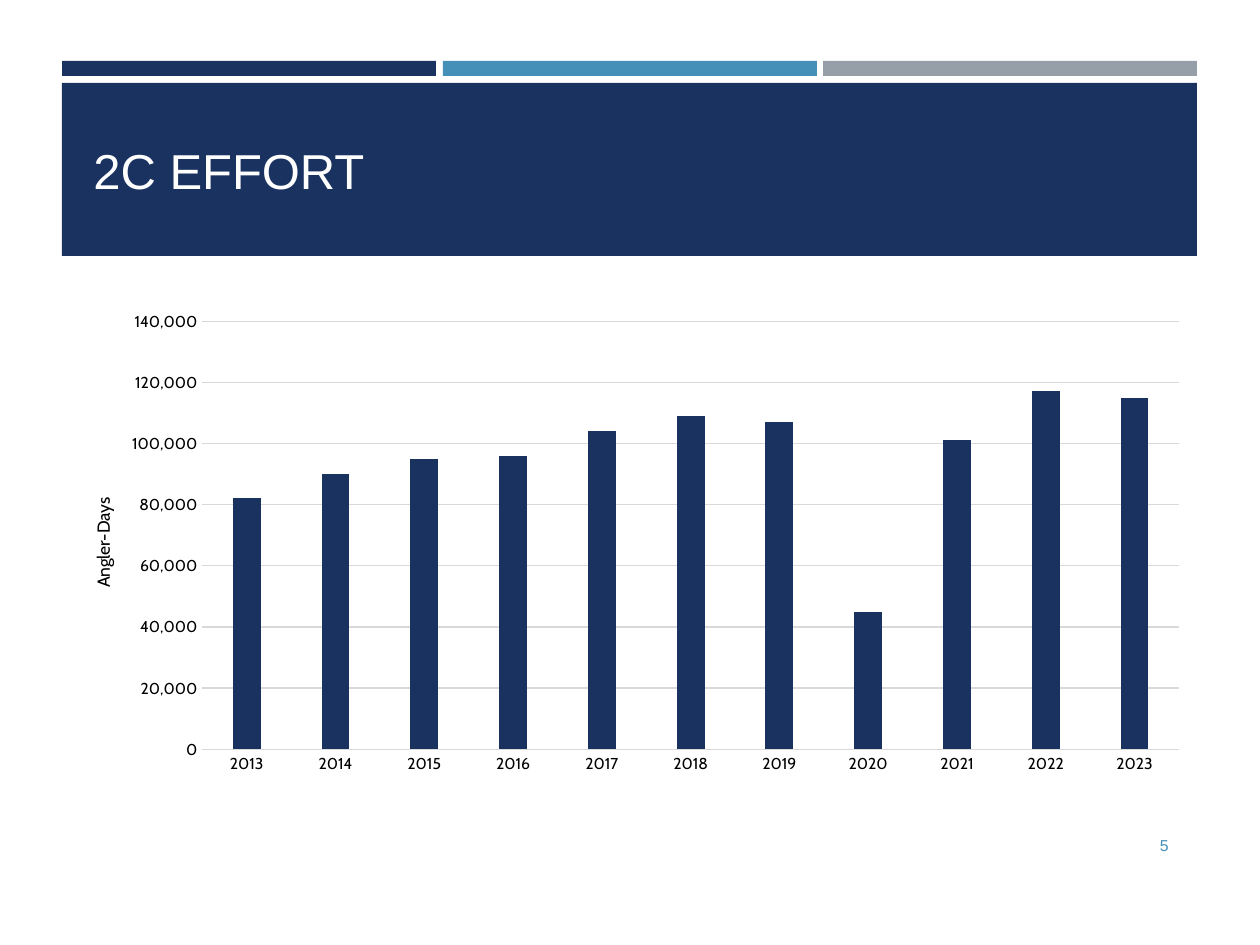
import pptx
import pptx.chart.data
import pptx.dml.color
import pptx.enum.chart
import pptx.enum.shapes
import pptx.enum.text
import pptx.oxml
import pptx.oxml.ns
import pptx.util

PX = 914400 / 126
NAVY = pptx.dml.color.RGBColor(0x1A, 0x32, 0x60)
BLUE = pptx.dml.color.RGBColor(0x45, 0x90, 0xB8)
GRAY = pptx.dml.color.RGBColor(0x96, 0x9F, 0xA7)
PALE = pptx.dml.color.RGBColor(0xD9, 0xD9, 0xD9)
BLACK = pptx.dml.color.RGBColor(0, 0, 0)
WHITE = pptx.dml.color.RGBColor(255, 255, 255)
ALIGN = pptx.enum.text.PP_ALIGN


def emu(*lengths):
    return [pptx.util.Emu(round(length * PX)) for length in lengths]


def set_layout(parent, index, **fractions):
    for old in parent.findall(pptx.oxml.ns.qn("c:layout")):
        parent.remove(old)
    entries = "".join(f'<c:{key} val="{value}"/>' for key, value in fractions.items())
    parent.insert(index, pptx.oxml.parse_xml(
        f'<c:layout {pptx.oxml.ns.nsdecls("c")}><c:manualLayout>{entries}'
        '</c:manualLayout></c:layout>'))


deck = pptx.Presentation()
deck.slide_width, deck.slide_height = emu(1260, 945)
slide = deck.slides.add_slide(deck.slide_layouts[6])

for left, top, width, height, color in [
    (62, 61, 374, 15, NAVY),
    (443, 61, 374, 15, BLUE),
    (823, 61, 374, 15, GRAY),
    (62, 83, 1135, 173, NAVY),
]:
    band = slide.shapes.add_shape(
        pptx.enum.shapes.MSO_SHAPE.RECTANGLE, *emu(left, top, width, height))
    band.shadow.inherit = False
    band.fill.solid()
    band.fill.fore_color.rgb = color
    band.line.fill.background()

for wording, place, size, color, align in [
    ("2C EFFORT", (81, 95, 1101, 149), 28, WHITE, ALIGN.LEFT),
    ("5", (1075, 820, 106, 50), 9, BLUE, ALIGN.RIGHT),
]:
    frame = slide.shapes.add_textbox(*emu(*place)).text_frame
    frame.word_wrap = True
    frame.vertical_anchor = pptx.enum.text.MSO_ANCHOR.MIDDLE
    frame.paragraphs[0].alignment = align
    run = frame.paragraphs[0].add_run()
    run.text = wording
    run.font.name = "Arial"
    run.font.size = pptx.util.Pt(size)
    run.font.color.rgb = color

effort = pptx.chart.data.CategoryChartData(number_format="#,##0")
effort.categories = [str(year) for year in range(2013, 2024)]
effort.add_series("Series 1", [82000, 90000, 95000, 96000, 104000, 109000,
                               107000, 45000, 101000, 117000, 115000])
chart = slide.shapes.add_chart(
    pptx.enum.chart.XL_CHART_TYPE.COLUMN_CLUSTERED,
    *emu(53, 302, 1149, 481), effort).chart
chart.has_legend = False
chart.has_title = False
chart.font.name = "Cabin"
chart.font.size = pptx.util.Pt(10)
chart.font.color.rgb = BLACK

columns = chart.plots[0]
columns.gap_width = 219
columns.overlap = -27
columns.vary_by_categories = False
columns.series[0].format.fill.solid()
columns.series[0].format.fill.fore_color.rgb = NAVY

years, days = chart.category_axis, chart.value_axis
for axis in (years, days):
    axis.major_tick_mark = pptx.enum.chart.XL_TICK_MARK.NONE
    axis.minor_tick_mark = pptx.enum.chart.XL_TICK_MARK.NONE
    axis.tick_labels.font.name = "Cabin"
    axis.tick_labels.font.size = pptx.util.Pt(9)
    axis.tick_labels.font.color.rgb = BLACK

days.has_major_gridlines = True
for line in (years.format.line, days.major_gridlines.format.line):
    line.color.rgb = PALE
    line.width = pptx.util.Pt(0.75)
days.format.line.fill.background()
days.minimum_scale = 0
days.maximum_scale = 140000
days.major_unit = 20000
days.tick_labels.number_format = "#,##0"
days.tick_labels.number_format_is_linked = False

days.has_title = True
unit = days.axis_title.text_frame.paragraphs[0].add_run()
unit.text = "Angler-Days"
unit.font.name = "Cabin"
unit.font.size = pptx.util.Pt(10)
unit.font.bold = False
unit.font.color.rgb = BLACK

set_layout(days.axis_title._element, 1, xMode="edge", yMode="edge", x=0.03, y=0.4)
set_layout(chart._chartSpace.chart.plotArea, 0, layoutTarget="inner",
           xMode="edge", yMode="edge", x=0.13, y=0.04, w=0.85, h=0.89)

deck.save("out.pptx")
